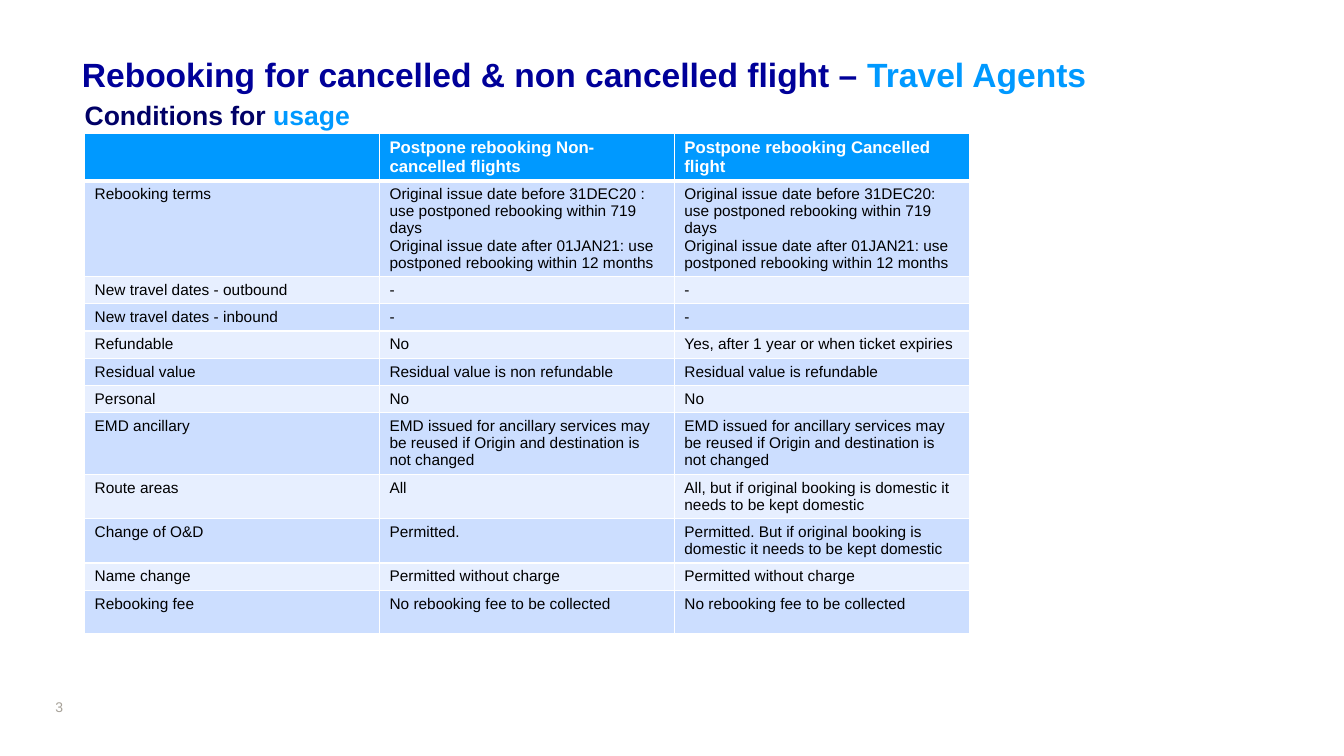
from lxml import etree
from pptx import Presentation
from pptx.dml.color import RGBColor
from pptx.enum.text import MSO_ANCHOR, MSO_AUTO_SIZE, PP_ALIGN
from pptx.oxml.ns import qn
from pptx.util import Pt

TOP, MIDDLE = MSO_ANCHOR.TOP, MSO_ANCHOR.MIDDLE
LEFT = PP_ALIGN.LEFT
NO_AUTOFIT = MSO_AUTO_SIZE.NONE
TITLE_ONLY = 5

COLORS = {
    "navy": "000099",
    "dark": "000066",
    "sky": "0099FF",
    "grey": "A7A299",
    "white": "FFFFFF",
    "black": "000000",
    "band": "CCDEFF",
    "pale": "E7EFFF",
}


def write_spans(para, spans, size, bold):
    """Add (text, colour) spans to a left-aligned paragraph."""
    para.alignment = LEFT
    for text, color in spans:
        span = para.add_run()
        span.text = text
        for name, value in {"name": "Arial", "size": Pt(size), "bold": bold}.items():
            setattr(span.font, name, value)
        span.font.color.rgb = RGBColor.from_string(COLORS[color])


def add_border(cell, side, width):
    """Draw one white edge of a table cell."""
    line = etree.SubElement(cell._tc.get_or_add_tcPr(), qn(f"a:ln{side}"), w=str(Pt(width)))
    fill = etree.SubElement(line, qn("a:solidFill"))
    etree.SubElement(fill, qn("a:srgbClr"), val=COLORS["white"])


deck = Presentation()
deck.slide_width = Pt(960.75)
deck.slide_height = Pt(540.42)
slide = deck.slides.add_slide(deck.slide_layouts[TITLE_ONLY])

# Title, subtitle and page number
title = slide.shapes.title
subtitle = slide.shapes.add_textbox(0, 0, 0, 0)
page_number = slide.shapes.add_textbox(0, 0, 0, 0)
headings = [
    (title, (58.5, 38.2, 843, 48.2), TOP, 24, True,
     [("Rebooking for cancelled & non cancelled flight – ", "navy"), ("Travel Agents", "sky")]),
    (subtitle, (60.5, 70.5, 843, 33.8), TOP, 19, True,
     [("Conditions for ", "dark"), ("usage", "sky")]),
    (page_number, (39.6, 498, 43.9, 14.4), MIDDLE, 10, False, [("3", "grey")]),
]
for box, place, anchor, size, bold, spans in headings:
    box.left, box.top, box.width, box.height = map(Pt, place)
    frame = box.text_frame
    frame_format = {
        "word_wrap": True, "auto_size": NO_AUTOFIT, "vertical_anchor": anchor,
        "margin_left": 0, "margin_top": 0, "margin_right": 0, "margin_bottom": 0,
    }
    for name, value in frame_format.items():
        setattr(frame, name, value)
    write_spans(frame.paragraphs[0], spans, size, bold)

# Table contents: one text per column
AFTER = "Original issue date after 01JAN21: use postponed rebooking within 12 months"
EMD = "EMD issued for ancillary services may be reused if Origin and destination is not changed"
FREE = "Permitted without charge"
NO_FEE = "No rebooking fee to be collected"
rows = [
    ("", "Postpone rebooking Non-cancelled flights", "Postpone rebooking Cancelled flight"),
    ("Rebooking terms",
     "Original issue date before 31DEC20 : use postponed rebooking within 719 days\n" + AFTER,
     "Original issue date before 31DEC20: use postponed rebooking within 719 days\n" + AFTER),
    ("New travel dates - outbound", "-", "-"),
    ("New travel dates - inbound", "-", "-"),
    ("Refundable", "No", "Yes, after 1 year or when ticket expiries"),
    ("Residual value", "Residual value is non refundable", "Residual value is refundable"),
    ("Personal", "No", "No"),
    ("EMD ancillary", EMD, EMD),
    ("Route areas", "All",
     "All, but if original booking is domestic it needs to be kept domestic"),
    ("Change of O&D", "Permitted.",
     "Permitted. But if original booking is domestic it needs to be kept domestic"),
    ("Name change", FREE, FREE),
    ("Rebooking fee", NO_FEE, NO_FEE),
]

# Conditions table: rows grow with their text, the last one is taller
ROW_HEIGHT, LAST_HEIGHT = 18.9, 31.3
table_frame = slide.shapes.add_table(
    len(rows), 3, Pt(60.5), Pt(95.1), Pt(632.4), Pt(379.4))
table = table_frame.table
for column in table.columns:
    column.width = Pt(210.8)
for row_index, texts in enumerate(rows):
    is_header = row_index == 0
    is_last = row_index == len(rows) - 1
    table.rows[row_index].height = Pt(LAST_HEIGHT if is_last else ROW_HEIGHT)
    if is_header:
        fill_color, text_color, size = "sky", "white", 12
    else:
        fill_color, text_color, size = "band" if row_index % 2 else "pale", "black", 11
    edges = {"L": 1, "R": 1, "T": 3 if row_index == 1 else 1, "B": 3 if is_header else 1}
    for column_index, text in enumerate(texts):
        cell = table.cell(row_index, column_index)
        for side, width in edges.items():
            add_border(cell, side, width)
        cell.fill.solid()
        cell.fill.fore_color.rgb = RGBColor.from_string(COLORS[fill_color])
        if not text:
            continue
        for line_index, line in enumerate(text.split("\n")):
            frame = cell.text_frame
            para = frame.add_paragraph() if line_index else frame.paragraphs[0]
            write_spans(para, [(line, text_color)], size, is_header)
table_frame.height = Pt(379.4)

deck.save("out.pptx")
